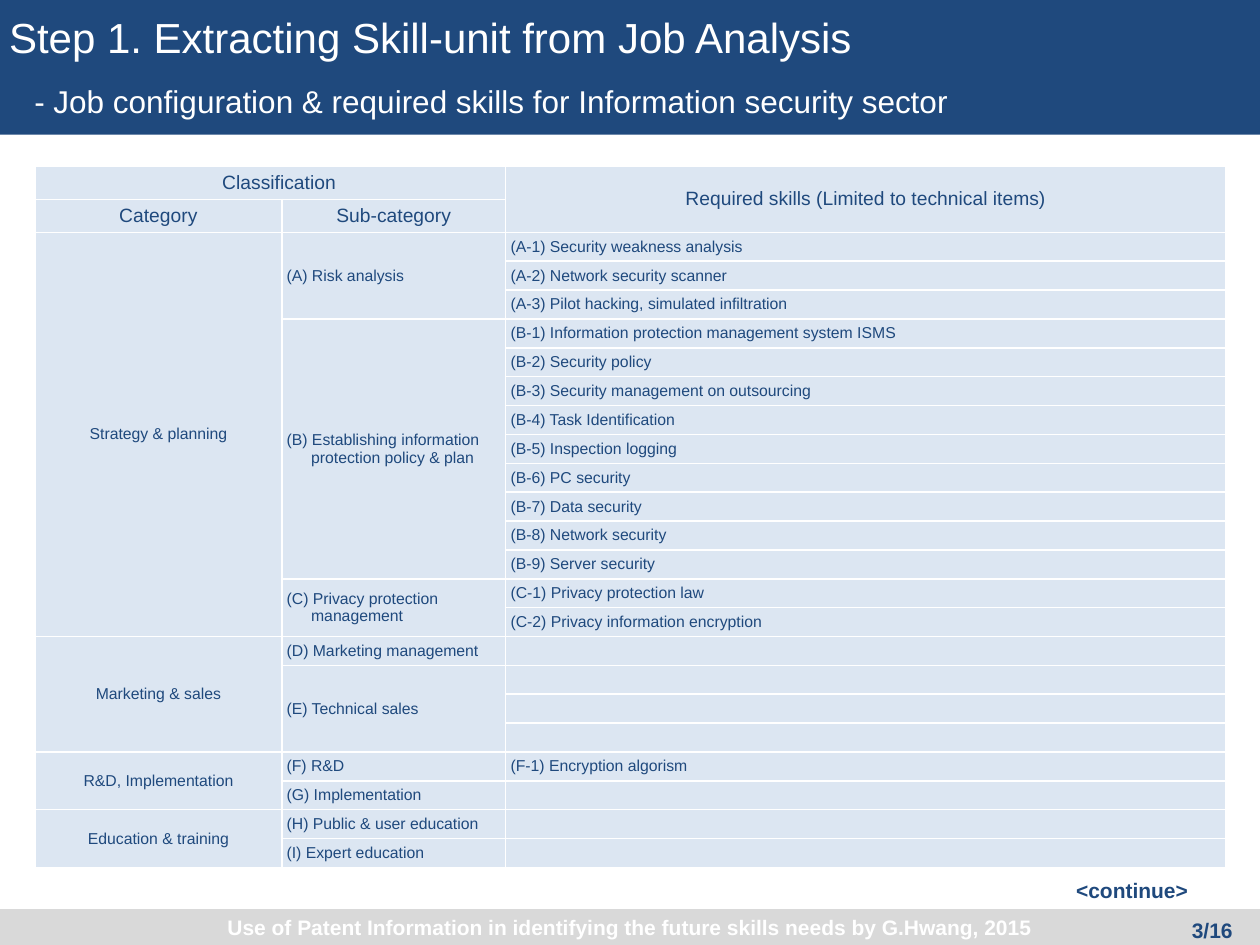
import pptx
import pptx.util
import pptx.dml.color
import pptx.enum.shapes
import pptx.enum.text
import pptx.oxml.ns
from lxml import etree

Pt = pptx.util.Pt
ALIGN = pptx.enum.text.PP_ALIGN
ANCHOR = pptx.enum.text.MSO_ANCHOR
FIT = pptx.enum.text.MSO_AUTO_SIZE
qn = pptx.oxml.ns.qn

FONT = "Arial"
COLORS = {"navy": "1F497D", "pale": "DCE6F2", "grey": "D9D9D9", "white": "FFFFFF"}

JOBS = [
    ("Strategy & planning", [
        ("(A) Risk analysis", [
            "(A-1) Security weakness analysis",
            "(A-2) Network security scanner",
            "(A-3) Pilot hacking, simulated infiltration"]),
        ("(B) Establishing information \vprotection policy & plan", [
            "(B-1) Information protection management system ISMS",
            "(B-2) Security policy",
            "(B-3) Security management on outsourcing",
            "(B-4) Task Identification",
            "(B-5) Inspection logging",
            "(B-6) PC security",
            "(B-7) Data security",
            "(B-8) Network security",
            "(B-9) Server security"]),
        ("(C) Privacy protection management", [
            "(C-1) Privacy protection law",
            "(C-2) Privacy information encryption"])]),
    ("Marketing & sales", [
        ("(D) Marketing management", [""]),
        ("(E) Technical sales", ["", "", ""])]),
    ("R&D, Implementation", [
        ("(F) R&D", ["(F-1) Encryption algorism"]),
        ("(G) Implementation", [""])]),
    ("Education & training", [
        ("(H) Public & user education", [""]),
        ("(I) Expert education", [""])]),
]


def color(name):
    return pptx.dml.color.RGBColor.from_string(COLORS[name])


def style(para, size, tone, bold=False, align=ALIGN.LEFT):
    para.alignment = align
    for run in para.runs:
        run.font.name = FONT
        run.font.size = Pt(size)
        run.font.bold = bold
        run.font.color.rgb = color(tone)


def place(shape, box):
    shape.left, shape.top, shape.width, shape.height = map(Pt, box)


def write(shape, text, size, tone, bold=False, align=ALIGN.LEFT):
    frame = shape.text_frame
    frame.text = text
    frame.word_wrap = True
    frame.auto_size = FIT.SHAPE_TO_FIT_TEXT
    frame.vertical_anchor = ANCHOR.TOP
    style(frame.paragraphs[0], size, tone, bold, align)


def label(slide, box, *args, **kwargs):
    write(slide.shapes.add_textbox(*map(Pt, box)), *args, **kwargs)


def band(slide, box, tone):
    rect = slide.shapes.add_shape(
        pptx.enum.shapes.MSO_SHAPE.RECTANGLE, *map(Pt, box))
    rect.shadow.inherit = False
    rect.fill.solid()
    rect.fill.fore_color.rgb = color(tone)
    rect.line.fill.background()
    return rect


def header(slide, box):
    left, top, width, height = box
    title = slide.shapes.title
    title.element.addprevious(band(slide, box, "navy").element)
    place(title, (left - 2, top + 3, width + 2, 36))
    write(title, "Step 1. Extracting Skill-unit from Job Analysis", 24, "white")
    label(slide, (left + 12.5, top + 43.5, width - 26, 29),
          "- Job configuration & required skills for Information security sector",
          18, "white")


def footer(slide, box):
    left, top, width, height = box
    frame = band(slide, box, "grey").text_frame
    frame.text = ("Use of Patent Information in identifying the future "
                  "skills needs by G.Hwang, 2015")
    frame.vertical_anchor = ANCHOR.MIDDLE
    style(frame.paragraphs[0], 12, "white", True, ALIGN.CENTER)
    right = left + width
    label(slide, (right - 122, top - 21.5, 88, 21.5), "<continue>",
          12, "navy", True, ALIGN.RIGHT)
    label(slide, (right - 74.5, top + 1.5, 66, 21.5), "3/16",
          12, "navy", True, ALIGN.RIGHT)


def frame_cell(cell):
    """Give a cell its margins, white borders, fill and small empty line."""
    cell.margin_left = cell.margin_right = Pt(2.8)
    cell.margin_top = cell.margin_bottom = Pt(2.8)
    cell.vertical_anchor = ANCHOR.MIDDLE
    props = cell._tc.get_or_add_tcPr()
    for side in ("lnL", "lnR", "lnT", "lnB"):
        line = etree.SubElement(props, qn("a:" + side), w=str(Pt(1)))
        fill = etree.SubElement(line, qn("a:solidFill"))
        etree.SubElement(fill, qn("a:srgbClr"), val=COLORS["white"])
    cell.fill.solid()
    cell.fill.fore_color.rgb = color("pale")
    para = cell.text_frame.paragraphs[0]
    etree.SubElement(para._p, qn("a:endParaRPr"), sz="900")


def fill_cell(table, row, col, text, size=9, align=ALIGN.LEFT,
              rows=1, cols=1, left=0, first=0):
    """Write a cell that spans rows and cols, indented by left and first."""
    cell = table.cell(row, col)
    if rows > 1 or cols > 1:
        cell.merge(table.cell(row + rows - 1, col + cols - 1))
    if not text:
        return
    para = cell.text_frame.paragraphs[0]
    para.text = text
    style(para, size, "navy", align=align)
    if left or first:
        props = para._p.get_or_add_pPr()
        props.set("marL", str(Pt(left)))
        props.set("indent", str(Pt(first)))


def job_table(slide, box):
    left, top, width, height = box
    count = sum(len(skills) for _, subs in JOBS for _, skills in subs)
    table = slide.shapes.add_table(count + 2, 3, *map(Pt, box)).table
    table.first_row = table.horz_banding = False
    cols = (141, 128)
    for col, size in zip(table.columns, (*cols, width - sum(cols))):
        col.width = Pt(size)
    head = 18.9
    for i, row in enumerate(table.rows):
        row.height = Pt(head if i < 2 else (height - 2 * head) / count)
    for cell in table.iter_cells():
        frame_cell(cell)

    mid = ALIGN.CENTER
    fill_cell(table, 0, 0, "Classification", 11, mid, cols=2, first=10)
    fill_cell(table, 0, 2, "Required skills (Limited to technical items)",
              11, mid, rows=2)
    fill_cell(table, 1, 0, "Category", 11, mid)
    fill_cell(table, 1, 1, "Sub-category", 11, mid)
    row = 2
    for group, subs in JOBS:
        span = sum(len(skills) for _, skills in subs)
        fill_cell(table, row, 0, group, align=mid, rows=span)
        for sub, skills in subs:
            hang = 14 if sub[:3] in ("(B)", "(C)") else 0
            fill_cell(table, row, 1, sub, rows=len(skills),
                      left=hang, first=-hang)
            for skill in skills:
                fill_cell(table, row, 2, skill, left=7, first=-7)
                row += 1


def main():
    deck = pptx.Presentation()
    deck.slide_width, deck.slide_height = Pt(720), Pt(540)
    slide = deck.slides.add_slide(deck.slide_layouts.get_by_name("Title Only"))
    header(slide, (0, 0, 720, 77))
    job_table(slide, (20, 95, 680.5, 400.8))
    footer(slide, (0, 519.5, 720, 20.5))
    deck.save("out.pptx")


if __name__ == "__main__":
    main()
